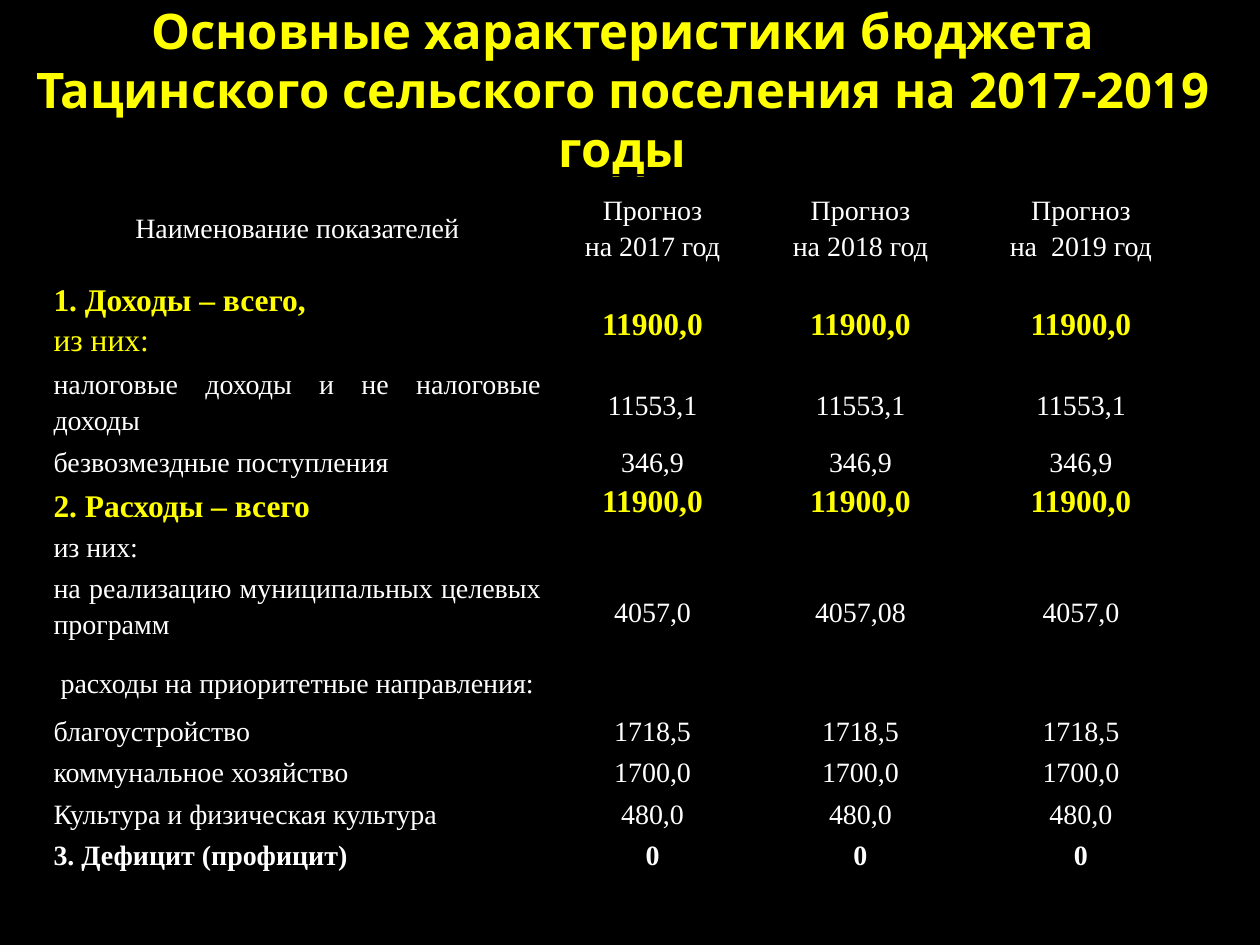
import pptx
import pptx.dml.color
import pptx.enum.text
import pptx.oxml
import pptx.oxml.ns
import pptx.util

Pt = pptx.util.Pt
ALIGN = pptx.enum.text.PP_ALIGN
ANCHOR = pptx.enum.text.MSO_ANCHOR

COLORS = {"black": "000000", "yellow": "FFFF00", "white": "FFFFFF"}
BODY_FONT = "Times New Roman"

TITLE = "Основные характеристики бюджета Тацинского сельского поселения на 2017-2019 годы"
COLUMN_WIDTHS = [289.4, 116.6, 121, 131]

NORMAL = {"size": 16, "color": "white", "bold": False}
STRONG = {"size": 16, "color": "white", "bold": True}
TOTAL = {"size": 18, "color": "yellow", "bold": True}
TOTAL_NOTE = {"size": 18, "color": "yellow", "bold": False}

MIDDLE, TOP = ANCHOR.MIDDLE, ANCHOR.TOP

# height, label lines with styles, three yearly values, style and anchor of the values
ROWS = [
    (47.5, [("1. Доходы – всего,", TOTAL), ("из них:", TOTAL_NOTE)],
     ["11900,0"] * 3, TOTAL, MIDDLE),
    (35.3, [("налоговые доходы и не налоговые доходы", NORMAL)],
     ["11553,1"] * 3, NORMAL, MIDDLE),
    (23.8, [("безвозмездные поступления", NORMAL)], ["346,9"] * 3, NORMAL, TOP),
    (23.8, [("2. Расходы – всего", TOTAL)], ["11900,0"] * 3, TOTAL, TOP),
    (23.8, [("из них:", NORMAL)], [], NORMAL, TOP),
    (47.5, [("на реализацию муниципальных целевых программ", NORMAL)],
     ["4057,0", "4057,08", "4057,0"], NORMAL, MIDDLE),
    (33.8, [("расходы на приоритетные направления:", NORMAL)], [], NORMAL, MIDDLE),
    (23.8, [("благоустройство", NORMAL)], ["1718,5"] * 3, NORMAL, TOP),
    (23.8, [("коммунальное хозяйство", NORMAL)], ["1700,0"] * 3, NORMAL, TOP),
    (23.8, [("Культура и физическая культура", NORMAL)], ["480,0"] * 3, NORMAL, TOP),
    (23.8, [("3. Дефицит (профицит)", STRONG)], ["0"] * 3, STRONG, TOP),
]
HEADER_HEIGHT = 59
HEADERS = [["Наименование показателей"]] + [
    ["Прогноз", period] for period in ("на 2017 год", "на 2018 год", "на  2019 год")
]


def rgb(name):
    return pptx.dml.color.RGBColor.from_string(COLORS[name])


def set_all(target, values):
    for name, value in values.items():
        setattr(target, name, value)


def set_default_font(deck):
    """Make the body font the default, so that it also sets the row heights."""
    defaults = deck.element.find(pptx.oxml.ns.qn("p:defaultTextStyle"))
    if defaults is not None:
        for latin in defaults.iter(pptx.oxml.ns.qn("a:latin")):
            latin.set("typeface", BODY_FONT)


def write_para(para, text, style, align, spacing, font=BODY_FONT):
    set_all(para, {"alignment": align, "line_spacing": spacing})
    span = para.add_run()
    span.text = text
    set_all(span.font, {"name": font, "size": Pt(style["size"]), "bold": style["bold"]})
    span.font.color.rgb = rgb(style["color"])
    para._p.append(pptx.oxml.parse_xml(
        f'<a:endParaRPr {pptx.oxml.ns.nsdecls("a")} sz="{style["size"] * 100}">'
        f'<a:latin typeface="{font}"/></a:endParaRPr>'
    ))


def border_cell(cell):
    properties = cell._tc.get_or_add_tcPr()
    for index, side in enumerate(("lnL", "lnR", "lnT", "lnB")):
        line = pptx.oxml.parse_xml(
            f'<a:{side} {pptx.oxml.ns.nsdecls("a")} w="{Pt(1)}"><a:solidFill>'
            f'<a:srgbClr val="{COLORS["black"]}"/></a:solidFill></a:{side}>'
        )
        properties.insert(index, line)


def write_cell(cell, lines, align, anchor, spacing=1.15):
    for index, (text, style) in enumerate(lines):
        frame = cell.text_frame
        para = frame.add_paragraph() if index else frame.paragraphs[0]
        write_para(para, text, style, align, spacing)
    cell.vertical_anchor = anchor


def add_title(page, left, top, width, height):
    frame = page.shapes.add_textbox(Pt(left), Pt(top), Pt(width), Pt(height)).text_frame
    set_all(frame, {
        "word_wrap": True,
        "vertical_anchor": ANCHOR.BOTTOM,
        "margin_bottom": Pt(10.5),
    })
    style = {"size": 28, "color": "yellow", "bold": True}
    write_para(frame.paragraphs[0], TITLE, style, ALIGN.CENTER, 1.0, "Noto Sans")


def add_budget_table(page, left, top):
    heights = [HEADER_HEIGHT] + [row[0] for row in ROWS]
    table = page.shapes.add_table(
        len(heights), len(COLUMN_WIDTHS), Pt(left), Pt(top),
        Pt(sum(COLUMN_WIDTHS)), Pt(sum(heights)),
    ).table
    set_all(table, {"first_row": False, "horz_banding": False})
    for style_id in table._tbl.tblPr.findall(pptx.oxml.ns.qn("a:tableStyleId")):
        table._tbl.tblPr.remove(style_id)
    for column, width in zip(table.columns, COLUMN_WIDTHS):
        column.width = Pt(width)
    for row, height in zip(table.rows, heights):
        row.height = Pt(height)
    for cell in table.iter_cells():
        set_all(cell, {
            "margin_left": Pt(5.4), "margin_right": Pt(5.4),
            "margin_top": 0, "margin_bottom": 0,
        })
        cell.fill.background()
        border_cell(cell)

    for column, lines in enumerate(HEADERS):
        header = [(text, NORMAL) for text in lines]
        write_cell(table.cell(0, column), header, ALIGN.CENTER, MIDDLE)
    for index, (_, label, values, style, anchor) in enumerate(ROWS, 1):
        subheading = not values and anchor == MIDDLE
        write_cell(table.cell(index, 0), label,
                   ALIGN.CENTER if subheading else ALIGN.JUSTIFY,
                   MIDDLE if subheading else TOP)
        spacing = 1.0 if style is TOTAL and anchor == TOP else 1.15
        for column, value in enumerate(values, 1):
            write_cell(table.cell(index, column), [(value, style)],
                       ALIGN.CENTER, anchor, spacing)


def main():
    deck = pptx.Presentation()
    set_all(deck, {"slide_width": Pt(720), "slide_height": Pt(540)})
    set_default_font(deck)
    page = deck.slides.add_slide(deck.slide_layouts[6])
    page.background.fill.solid()
    page.background.fill.fore_color.rgb = rgb("black")
    add_title(page, 0, 21.6, 711.4, 90)
    add_budget_table(page, 25.2, 100)
    deck.save("out.pptx")


if __name__ == "__main__":
    main()
